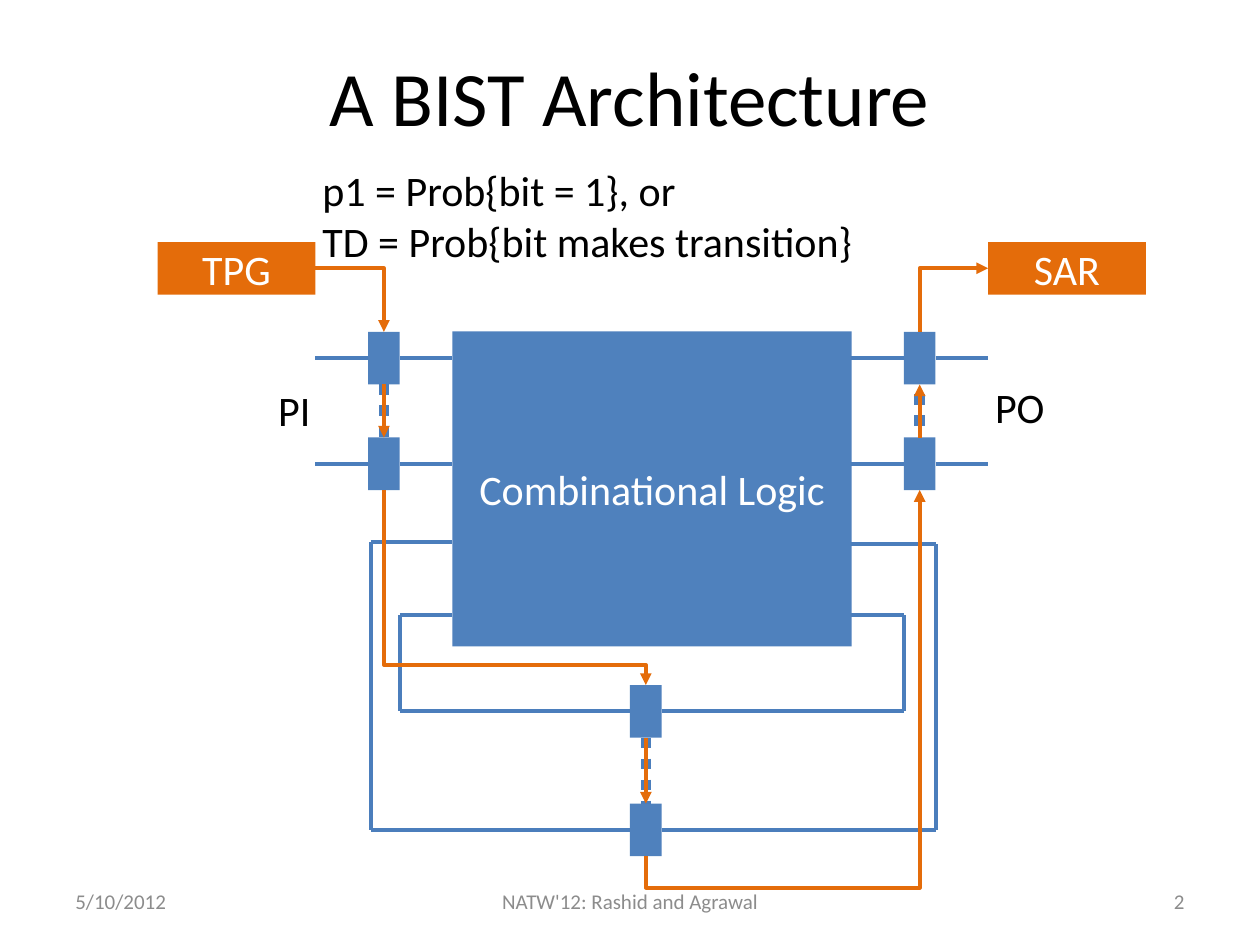
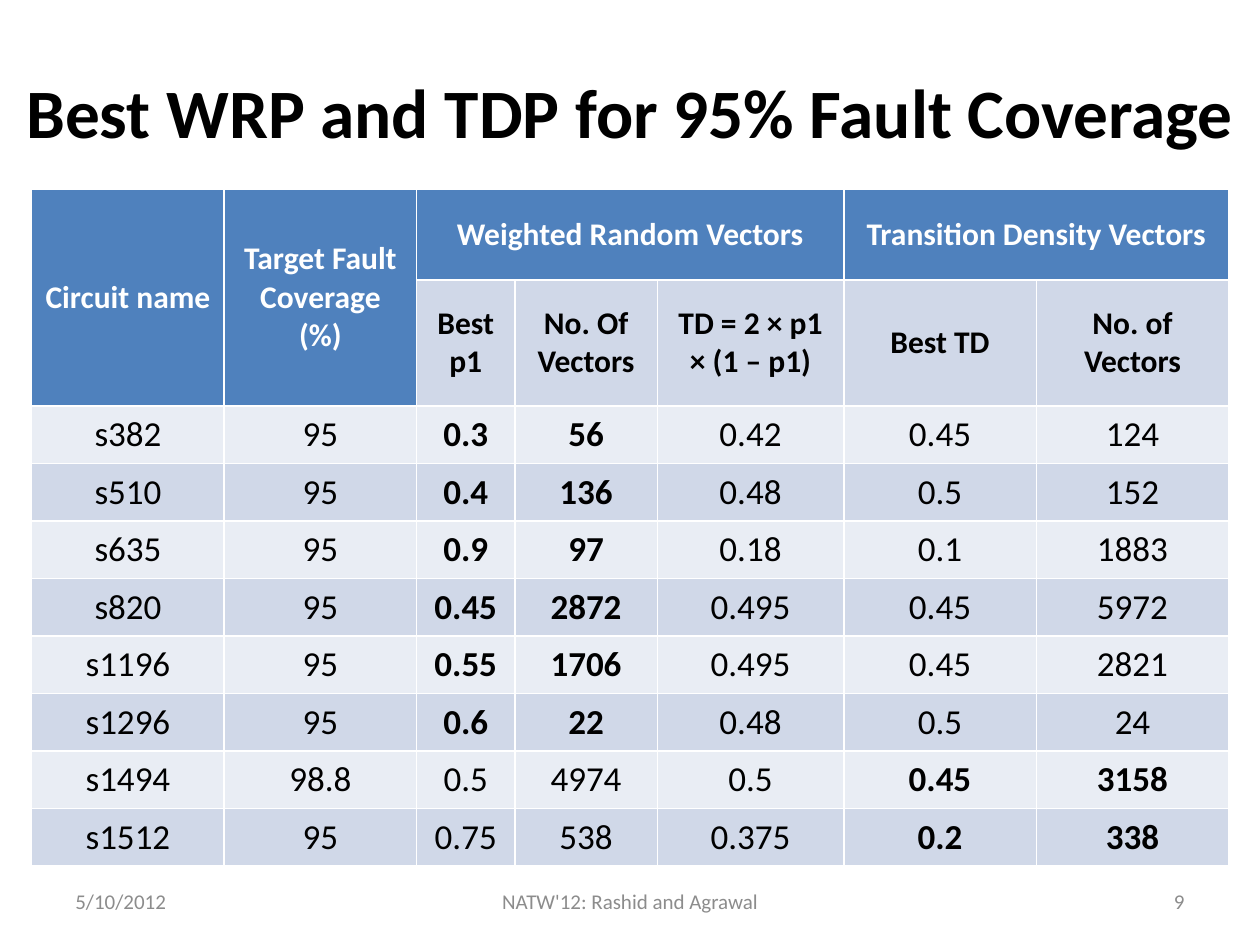
"""Build two slides on built-in self-test: an architecture diagram and a results table."""
from dataclasses import dataclass
from itertools import product

from lxml import etree
from pptx import Presentation
from pptx import util as u
from pptx.dml.color import RGBColor
from pptx.enum import dml, shapes, text
from pptx.oxml.ns import qn

COLOURS = {
    "black": "000000",
    "white": "FFFFFF",
    "grey": "8C8C8C",
    "blue": "4F81BD",
    "wire": "4B7EBC",
    "scan": "E46C0A",
    "band": "D0D8E8",
    "pale": "E9EDF4",
}
FONT = "Calibri"
LEFT, CENTRE, RIGHT = text.PP_ALIGN.LEFT, text.PP_ALIGN.CENTER, text.PP_ALIGN.RIGHT
MIDDLE, TOP = text.MSO_ANCHOR.MIDDLE, text.MSO_ANCHOR.TOP
TITLE_ONLY = 5
SNAP = u.Cm(0.06)

INPUT_X, STATE_X, OUTPUT_X = 7.42, 12.7, 18.22
CELL_WIDTH, CELL_HEIGHT = 0.64, 1.06
PORT_TOPS = (6.69, 8.82)
STATE_TOPS = (13.81, 16.2)
LOGIC_LEFT, LOGIC_RIGHT = 9.12, 17.15


@dataclass(frozen=True)
class Box:
    """A filled rectangle, in centimetres."""
    left: float
    top: float
    width: float = CELL_WIDTH
    height: float = CELL_HEIGHT
    caption: str = ""
    fill: str = "blue"


@dataclass(frozen=True)
class Label:
    """A text box, in centimetres."""
    caption: str
    left: float
    top: float
    width: float
    height: float
    size: float = 24
    colour: str = "black"
    align: text.PP_ALIGN = LEFT
    anchor: text.MSO_ANCHOR = TOP
    wrap: bool = True


@dataclass(frozen=True)
class Wire:
    """A straight connection, in centimetres."""
    start: tuple[float, float]
    end: tuple[float, float]
    colour: str = "wire"
    weight: float = 2.25
    dotted: bool = False
    arrow: bool = False


@dataclass(frozen=True)
class Elbow:
    """A bent scan path; an upright one leaves its start vertically."""
    start: tuple[float, float]
    end: tuple[float, float]
    preset: str = "bentConnector2"
    upright: bool = True
    bend: int | None = None


@dataclass(frozen=True)
class Loop:
    """A feedback loop from the logic through a state cell."""
    left: float
    right: float
    left_top: float
    right_top: float
    bottom: float


BOXES = [
    Box(LOGIC_LEFT, 6.68, 8.05, 6.35, "Combinational Logic"),
    *(Box(STATE_X, top) for top in STATE_TOPS),
    *(Box(left, top) for left, top in product((OUTPUT_X, INPUT_X), PORT_TOPS)),
    Box(3.18, 4.88, 3.18, CELL_HEIGHT, "TPG", "scan"),
    Box(19.92, 4.88, 3.18, CELL_HEIGHT, "SAR", "scan"),
]
LOOPS = [
    Loop(8.06, 18.22, 12.4, 12.4, 14.34),
    Loop(7.47, 18.86, 10.92, 10.97, 16.73),
]
PORT_SPANS = [
    (6.35, INPUT_X),
    (INPUT_X + CELL_WIDTH, LOGIC_LEFT),
    (LOGIC_RIGHT, OUTPUT_X),
    (OUTPUT_X + CELL_WIDTH, 19.92),
]
DOTS = [
    Wire(start, end, weight=6, dotted=True)
    for start, end in (
        ((7.74, 7.75), (7.74, 8.82)),
        ((13.02, 14.87), (13.02, 16.2)),
        ((18.54, 7.95), (18.54, 8.59)),
    )
]
SCAN_STEPS = [
    Wire(start, end, "scan", arrow=True)
    for start, end in (
        ((7.74, 7.75), (7.74, 8.82)),
        ((18.54, 8.82), (18.54, 7.75)),
        ((13.02, 14.87), (13.02, 16.2)),
    )
]
SCAN_BENDS = [
    Elbow((6.36, 5.41), (7.74, 6.69), upright=False),
    Elbow((7.74, 9.88), (13.02, 13.81), "bentConnector3", bend=89700),
    Elbow((13.02, 17.26), (18.54, 9.88), "bentConnector3", bend=-8600),
    Elbow((18.54, 6.69), (19.92, 5.41)),
]
DIAGRAM_LABELS = [
    Label("PI", 5.36, 7.62, 1.47, 1.27),
    Label("PO", 19.81, 7.57, 1.52, 1.27, wrap=False),
    Label("p1 = Prob{bit = 1}, or\nTD = Prob{bit makes transition}",
          6.25, 3.2, 11.28, 2.31, wrap=False),
]

COLUMN_WIDTHS = (3.88, 3.88, 1.98, 2.87, 3.76, 3.88, 3.88)
HEADINGS = ("Circuit name", "Target Fault Coverage (%)", "Weighted Random Vectors",
            "", "", "Transition Density Vectors", "")
SUBHEADINGS = ("", "", "Best\vp1", "No. Of Vectors", "TD = 2 × p1\n× (1 – p1)",
               "Best TD", "No. of Vectors")
MERGES = (((0, 0), (1, 0)), ((0, 1), (1, 1)), ((0, 2), (0, 4)), ((0, 5), (0, 6)))
RESULTS = [
    ("s382", 95, 0.3, 56, 0.42, 0.45, 124),
    ("s510", 95, 0.4, 136, 0.48, 0.5, 152),
    ("s635", 95, 0.9, 97, 0.18, 0.1, 1883),
    ("s820", 95, 0.45, 2872, 0.495, 0.45, 5972),
    ("s1196", 95, 0.55, 1706, 0.495, 0.45, 2821),
    ("s1296", 95, 0.6, 22, 0.48, 0.5, 24),
    ("s1494", 98.8, 0.5, 4974, 0.5, 0.45, 3158),
    ("s1512", 95, 0.75, 538, 0.375, 0.2, 338),
]


def rgb(name: str) -> RGBColor:
    """Return a named colour."""
    return RGBColor.from_string(COLOURS[name])


def write(frame, caption: str, size: float, colour: str, align=CENTRE, bold=False) -> None:
    """Fill a text frame and format its runs."""
    frame.text = caption
    for paragraph in frame.paragraphs:
        paragraph.alignment = align
        for run in paragraph.runs:
            run.font.name = FONT
            run.font.size = u.Pt(size)
            run.font.bold = bold
            run.font.color.rgb = rgb(colour)


def place(shape, left: float, top: float, width: float, height: float) -> None:
    """Move and size a shape in centimetres."""
    shape.left, shape.top = u.Cm(left), u.Cm(top)
    shape.width, shape.height = u.Cm(width), u.Cm(height)


def add_label(slide, label: Label) -> None:
    """Draw a text box."""
    shape = slide.shapes.add_textbox(0, 0, 0, 0)
    place(shape, label.left, label.top, label.width, label.height)
    shape.text_frame.word_wrap = label.wrap
    shape.text_frame.vertical_anchor = label.anchor
    write(shape.text_frame, label.caption, label.size, label.colour, label.align)


def add_titled_slide(presentation, title: str, number: int, frame: tuple, size=44, bold=False):
    """Add a slide with its title and footer."""
    slide = presentation.slides.add_slide(presentation.slide_layouts[TITLE_ONLY])
    place(slide.shapes.title, *frame)
    slide.shapes.title.text_frame.vertical_anchor = MIDDLE
    write(slide.shapes.title.text_frame, title, size, "black", bold=bold)
    for caption, left, width, align in (
        ("5/10/2012", 1.27, 5.92, LEFT),
        ("NATW'12: Rashid and Agrawal", 8.68, 8.05, CENTRE),
        (str(number), 18.21, 5.92, RIGHT),
    ):
        add_label(slide, Label(caption, left, 17.65, width, 1.02, 12, "grey", align, MIDDLE))
    return slide


def add_box(slide, box: Box):
    """Draw a filled rectangle and return it."""
    shape = slide.shapes.add_shape(shapes.MSO_SHAPE.RECTANGLE, 0, 0, 0, 0)
    place(shape, box.left, box.top, box.width, box.height)
    shape.shadow.inherit = False
    shape.fill.solid()
    shape.fill.fore_color.rgb = rgb(box.fill)
    shape.line.fill.background()
    if box.caption:
        shape.text_frame.vertical_anchor = MIDDLE
        write(shape.text_frame, box.caption, 24, "white")
    return shape


def style_connector(connector, colour: str, weight=2.25, dotted=False, arrow=False) -> None:
    """Set a connector's line, arrowhead and lack of shadow."""
    connector.line.color.rgb = rgb(colour)
    connector.line.width = u.Pt(weight)
    if dotted:
        connector.line.dash_style = dml.MSO_LINE.ROUND_DOT
    properties = connector.element.spPr
    if arrow:
        etree.SubElement(properties.find(qn("a:ln")), qn("a:tailEnd"), type="triangle")
    etree.SubElement(properties, qn("a:effectLst"))


def join(connect, point: tuple[float, float], drawn: list) -> None:
    """Join a connector end to the box side whose middle it meets."""
    x, y = map(u.Cm, point)
    for shape in drawn:
        middle_x, middle_y = shape.left + shape.width // 2, shape.top + shape.height // 2
        sides = ((middle_x, shape.top), (shape.left, middle_y),
                 (middle_x, shape.top + shape.height), (shape.left + shape.width, middle_y))
        for site, (side_x, side_y) in enumerate(sides):
            if abs(side_x - x) < SNAP and abs(side_y - y) < SNAP:
                connect(shape, site)
                return


def add_wire(slide, wire: Wire, drawn: list) -> None:
    """Draw a straight connector and join it to the boxes it meets."""
    connector = slide.shapes.add_connector(
        shapes.MSO_CONNECTOR.STRAIGHT, *map(u.Cm, wire.start + wire.end))
    join(connector.begin_connect, wire.start, drawn)
    join(connector.end_connect, wire.end, drawn)
    style_connector(connector, wire.colour, wire.weight, wire.dotted, wire.arrow)


def add_elbow(slide, elbow: Elbow) -> None:
    """Draw a bent scan arrow, turning its frame when it starts vertically."""
    (x1, y1), (x2, y2) = elbow.start, elbow.end
    points, downward = (x1, y1, x2, y2), y2 > y1
    if elbow.upright:
        middle_x, middle_y = (x1 + x2) / 2, (y1 + y2) / 2
        half_width = abs(y2 - y1) / 2
        half_height = (x2 - x1) / 2 * (1 if downward else -1)
        points = (middle_x + half_width, middle_y - half_height,
                  middle_x - half_width, middle_y + half_height)
    connector = slide.shapes.add_connector(shapes.MSO_CONNECTOR.ELBOW, *map(u.Cm, points))
    properties = connector.element.spPr
    if elbow.upright:
        properties.find(qn("a:xfrm")).set("rot", str((270 if downward else 90) * 60000))
    geometry = properties.find(qn("a:prstGeom"))
    geometry.set("prst", elbow.preset)
    if elbow.bend is not None:
        etree.SubElement(geometry.find(qn("a:avLst")), qn("a:gd"),
                         name="adj1", fmla=f"val {elbow.bend}")
    style_connector(connector, "scan", arrow=True)


def loop_wires(loop: Loop) -> list[Wire]:
    """Return the six wires of a feedback loop."""
    left_top, right_top = (loop.left, loop.left_top), (loop.right, loop.right_top)
    left_bottom, right_bottom = (loop.left, loop.bottom), (loop.right, loop.bottom)
    return [
        Wire(left_top, (LOGIC_LEFT, loop.left_top)),
        Wire((LOGIC_RIGHT, loop.right_top), right_top),
        Wire(left_top, left_bottom),
        Wire(right_top, right_bottom),
        Wire(left_bottom, (STATE_X, loop.bottom)),
        Wire((STATE_X + CELL_WIDTH, loop.bottom), right_bottom),
    ]


def build_architecture(presentation) -> None:
    """Build the architecture slide."""
    slide = add_titled_slide(presentation, "A BIST Architecture", 2, (1.27, 0.76, 22.86, 2.34))
    drawn = [add_box(slide, box) for box in BOXES]
    ports = [Wire((begin, top + CELL_HEIGHT / 2), (end, top + CELL_HEIGHT / 2))
             for top, (begin, end) in product(PORT_TOPS, PORT_SPANS)]
    loops = [wire for loop in LOOPS for wire in loop_wires(loop)]
    for wire in DOTS + ports + loops + SCAN_STEPS:
        add_wire(slide, wire, drawn)
    for elbow in SCAN_BENDS:
        add_elbow(slide, elbow)
    for label in DIAGRAM_LABELS:
        add_label(slide, label)


def set_cell(cell, caption: str, size: float, colour: str, fill: str, bold: bool) -> None:
    """Fill and format a table cell."""
    cell.fill.solid()
    cell.fill.fore_color.rgb = rgb(fill)
    cell.vertical_anchor = MIDDLE
    write(cell.text_frame, caption, size, colour, bold=bold)


def build_results(presentation) -> None:
    """Build the results slide, with the smaller vector count in bold."""
    slide = add_titled_slide(presentation, "Best WRP and TDP for 95% Fault Coverage", 9,
                             (0, 0.64, 25.4, 3.18), 39.6, True)
    table = slide.shapes.add_table(len(RESULTS) + 2, len(COLUMN_WIDTHS), u.Cm(0.64),
                                   u.Cm(3.81), u.Cm(24.13), u.Cm(13.13)).table
    for column, width in zip(table.columns, COLUMN_WIDTHS):
        column.width = u.Cm(width)
    for row, height in zip(table.rows, [1.83, 1.98] + [1.16] * len(RESULTS)):
        row.height = u.Cm(height)
    for column, (heading, subheading) in enumerate(zip(HEADINGS, SUBHEADINGS)):
        set_cell(table.cell(0, column), heading, 18, "white", "blue", True)
        set_cell(table.cell(1, column), subheading, 18, "black", "band", True)
    for index, result in enumerate(RESULTS):
        best = (2, 3) if result[3] < result[6] else (5, 6)
        fill = "band" if index % 2 else "pale"
        for column, value in enumerate(result):
            set_cell(table.cell(index + 2, column), str(value), 20, "black", fill, column in best)
    for first, last in MERGES:
        table.cell(*first).merge(table.cell(*last))


def main() -> None:
    """Build and save the presentation."""
    presentation = Presentation()
    presentation.slide_width, presentation.slide_height = u.Cm(25.4), u.Cm(19.05)
    build_architecture(presentation)
    build_results(presentation)
    presentation.save("out.pptx")


if __name__ == "__main__":
    main()
